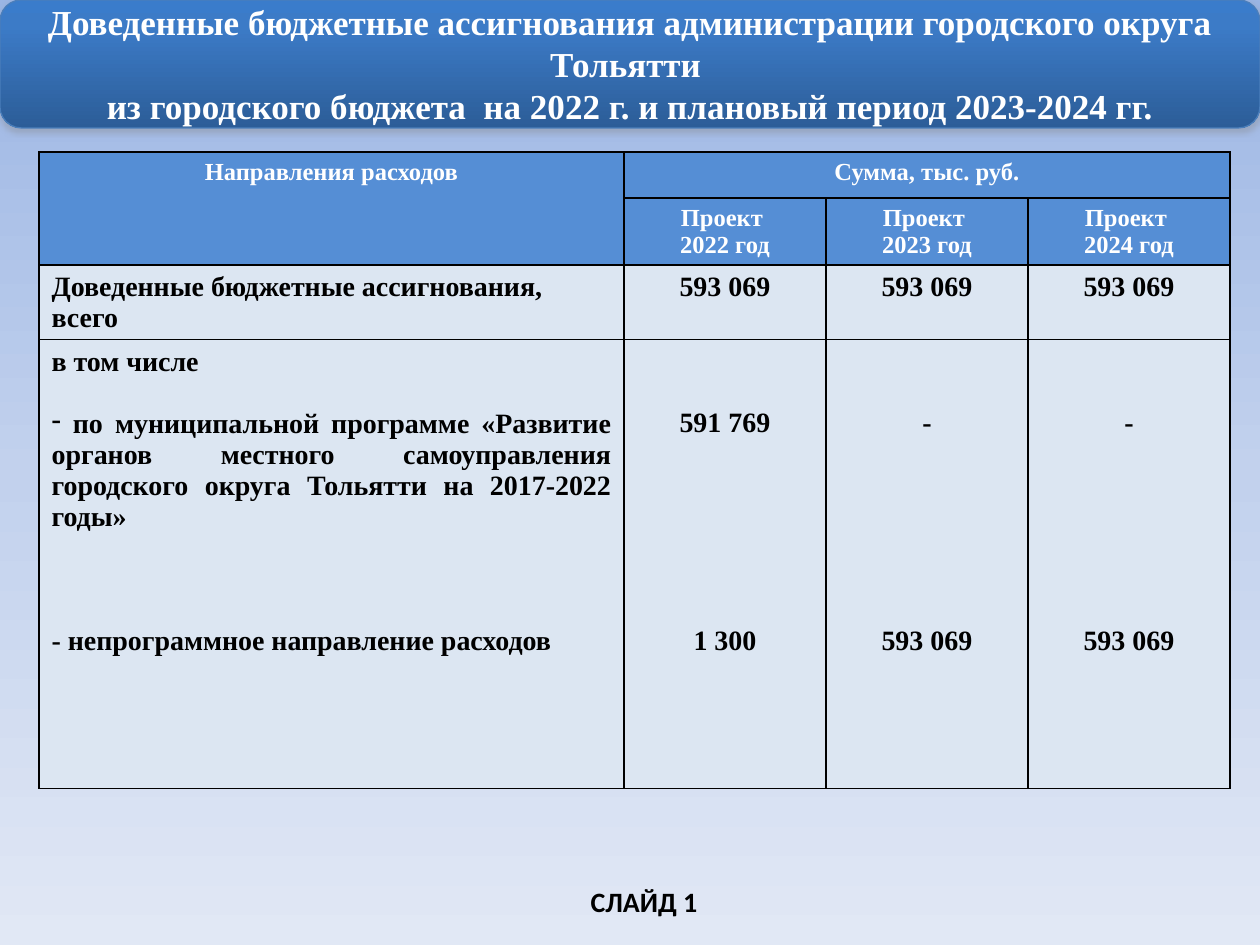
from lxml import etree
from pptx import Presentation
from pptx.dml.color import RGBColor
from pptx.enum.shapes import MSO_SHAPE
from pptx.enum.text import MSO_ANCHOR, MSO_AUTO_SIZE, PP_ALIGN
from pptx.oxml.ns import qn
from pptx.util import Emu, Pt

CENTER, JUSTIFY, LEFT = PP_ALIGN.CENTER, PP_ALIGN.JUSTIFY, PP_ALIGN.LEFT
TOP, MIDDLE = MSO_ANCHOR.TOP, MSO_ANCHOR.MIDDLE
NO_FIT = MSO_AUTO_SIZE.NONE
ROUNDED = MSO_SHAPE.ROUNDED_RECTANGLE

SERIF, SANS = "Times New Roman", "Calibri"
BLACK, WHITE, HEAD, BODY = "000000", "FFFFFF", "558ED5", "DCE6F2"
SKY = [(0, "9AB5E4"), (50, "C2D1ED"), (100, "E1E8F5")]
BANNER = [(0, "3A7CCB"), (20, "3C7BC7"), (100, "2C5D98")]

TITLE = [
    ("Доведенные бюджетные ассигнования администрации городского округа Тольятти ",
     {"line_spacing": Pt(24)}),
    ("из городского бюджета  на 2022 г. и плановый период 2023-2024 гг.",
     {"line_spacing": Pt(24)}),
]
YEARS = ["2022", "2023", "2024"]
TOTALS = ["593 069"] * 3
PROGRAMME = ["591 769", "-", "-"]
OTHER = ["1 300", "593 069", "593 069"]
DIRECTIONS = [
    ("в том числе", {}),
    (" по муниципальной программе «Развитие органов местного самоуправления "
     "городского округа Тольятти на 2017-2022 годы»", {"space_before": Pt(17.7), "bullet": "-"}),
    ("- непрограммное направление расходов", {"space_before": Pt(53.2)}),
]


def px(n):
    return Emu(round(n * 914400 / 126))


def rgb(value):
    return RGBColor.from_string(value)


def apply(target, values):
    for name, value in values.items():
        setattr(target, name, value)


def child(parent, tag, **attrs):
    return etree.SubElement(parent, qn(tag), attrs)


class Deck:
    """Holds the style and the current slide, and draws each kind of element."""

    def __init__(self, prs):
        self.font = {"name": SERIF, "bold": True}
        self.s = prs.slides.add_slide(prs.slide_layouts[1])

    def gradient(self, fill, element, stops):
        fill.gradient()
        fill.gradient_angle = 270
        stop_list = element.find(".//" + qn("a:gsLst"))
        stop_list.clear()
        for pos, color in stops:
            stop = child(stop_list, "a:gs", pos=str(pos * 1000))
            child(stop, "a:srgbClr", val=color)

    def background(self, stops):
        self.gradient(self.s.background.fill, self.s.element, stops)

    def text(self, tf, paragraphs, size, color, align, **font):
        for i, (words, form) in enumerate(paragraphs):
            p = tf.paragraphs[0] if i == 0 else tf.add_paragraph()
            form = {"alignment": align, "space_before": Pt(0), **form}
            bullet = form.pop("bullet", None)
            apply(p, form)
            pPr = p._p.get_or_add_pPr()
            for name in ("marL", "indent"):
                pPr.set(name, "0")
            if bullet:
                child(pPr, "a:buChar", char=bullet)
            else:
                child(pPr, "a:buNone")
            r = p.add_run()
            r.text = words
            apply(r.font, {**self.font, "size": Pt(size), **font})
            r.font.color.rgb = rgb(color)

    def placeholder(self, idx, box, paragraphs, size, color, frame, **font):
        sp = self.s.placeholders[idx]
        apply(sp, dict(zip(("left", "top", "width", "height"), map(px, box))))
        apply(sp.text_frame, {"word_wrap": True, "auto_size": NO_FIT, **frame})
        self.text(sp.text_frame, paragraphs, size, color, CENTER, **font)

    def banner(self, box, stops, line):
        sp = self.s.shapes.add_shape(ROUNDED, *map(px, box))
        sp.adjustments[0] = 0.167
        self.gradient(sp.fill, sp.element, stops)
        sp.line.color.rgb = rgb(line)
        sp.line.width = Pt(0.75)
        sp.shadow.inherit = False
        effects = sp.element.spPr.find(qn("a:effectLst"))
        shadow = child(effects, "a:outerShdw", blurRad=str(int(Pt(3.1))), dist=str(int(Pt(1.8))),
                       dir="5400000", rotWithShape="0")
        color = child(shadow, "a:srgbClr", val="808080")
        child(color, "a:alpha", val="35000")
        self.s.shapes.title.element.addprevious(sp.element)

    def table(self, left, top, widths, heights):
        box = map(px, (left, top, sum(widths), sum(heights)))
        tbl = self.s.shapes.add_table(len(heights), len(widths), *box).table
        apply(tbl, {"first_row": False, "horz_banding": False})
        for column, width in zip(tbl.columns, widths):
            column.width = px(width)
        for row, height in zip(tbl.rows, heights):
            row.height = px(height)
        return tbl

    def cell(self, cell, fill):
        cell.fill.solid()
        cell.fill.fore_color.rgb = rgb(fill)
        tcPr = cell._tc.get_or_add_tcPr()
        for i, side in enumerate("LRTB"):
            line = child(tcPr, "a:ln" + side, w=str(int(Pt(1))))
            child(child(line, "a:solidFill"), "a:srgbClr", val=BLACK)
            tcPr.insert(i, line)


def main():
    prs = Presentation()
    prs.slide_width, prs.slide_height = px(1260), px(945)
    deck = Deck(prs)
    deck.background(SKY)
    deck.banner((0, 0, 1260, 128), BANNER, "4A7EBB")
    deck.placeholder(0, (0, 0, 1260, 128), TITLE, 20, WHITE,
                     {"vertical_anchor": MIDDLE, "margin_top": 0, "margin_bottom": 0})

    tbl = deck.table(39, 152, [585, 202, 202, 202], [46, 66, 75, 449])
    for i, row in enumerate(tbl.rows):
        for cell in row.cells:
            deck.cell(cell, HEAD if i < 2 else BODY)
    tbl.cell(0, 0).merge(tbl.cell(1, 0))
    tbl.cell(0, 1).merge(tbl.cell(0, 3))

    def put(row, col, paragraphs, align=CENTER):
        size, color = (14, WHITE) if row < 2 else (16, BLACK)
        deck.text(tbl.cell(row, col).text_frame, paragraphs, size, color, align)

    put(0, 0, [("Направления расходов", {})])
    put(0, 1, [("Сумма, тыс. руб.", {})])
    put(2, 0, [("Доведенные бюджетные ассигнования, всего", {})], LEFT)
    put(3, 0, DIRECTIONS, JUSTIFY)
    for col, (year, total, programme, other) in enumerate(zip(YEARS, TOTALS, PROGRAMME, OTHER), 1):
        put(1, col, [("Проект ", {}), (f"{year} год", {})])
        put(2, col, [(total, {})])
        tbl.cell(3, col).margin_top = px(68)
        put(3, col, [(programme, {}), (other, {"space_before": Pt(106.5)})])

    deck.placeholder(1, (266, 876, 756, 50), [("СЛАЙД 1", {})], 16, BLACK,
                     {"vertical_anchor": TOP, "margin_top": px(9)}, name=SANS)
    prs.save("out.pptx")


if __name__ == "__main__":
    main()
